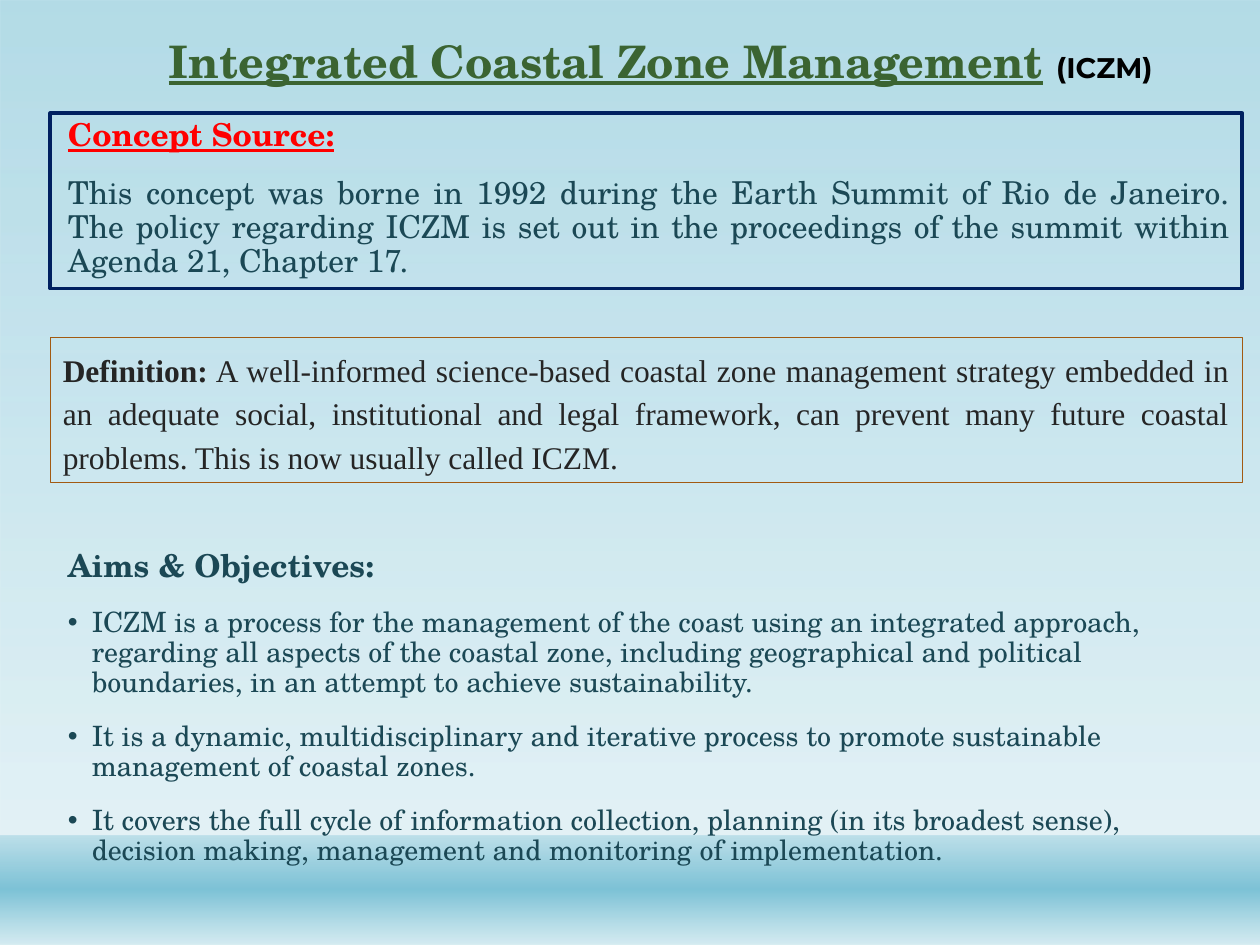
from lxml import etree
from pptx import Presentation
from pptx import util as u
from pptx.dml.color import RGBColor
from pptx.enum import shapes, text
from pptx.oxml.ns import qn

COLORS = {
    "water": "7DC2D6", "mist": "D4EBF1", "green": "3B6432", "black": "000000",
    "teal": "1B4855", "red": "FF0000", "navy": "002060", "brown": "A25A12",
    "ink": "252525",
}
SCHOLA, TIMES = "TeX Gyre Schola", "Times New Roman"

# Font formats
TITLE = dict(name=SCHOLA, size=25.6, color="green", bold=True, underline=True)
SHORT = dict(name="Montserrat", size=16.2, color="black", bold=True)
SOURCE_HEAD = dict(name=SCHOLA, size=18, color="red", bold=True, underline=True)
HEAD = dict(name=SCHOLA, size=18, color="teal", bold=True)
BODY = dict(name=SCHOLA, size=18, color="teal")
BULLET = dict(name=SCHOLA, size=16, color="teal")
TERM = dict(name=TIMES, size=18, color="ink", bold=True)
PROSE = dict(name=TIMES, size=18, color="ink")

# Paragraph formats
PLAIN = dict(spacing=0.9)
INSET = dict(spacing=0.9, left=0.04)
INSET_JUSTIFIED = dict(INSET, align=text.PP_ALIGN.JUSTIFY)
LISTED = dict(spacing=0.9, left=0.23, hang=-0.19, bullet="•")
LOOSE = dict(spacing=1.15, align=text.PP_ALIGN.JUSTIFY)

AIMS = [
    "ICZM is a process for the management of the coast using an integrated approach, "
    "regarding all aspects of the coastal zone, including geographical and political "
    "boundaries, in an attempt to achieve sustainability.",
    "It is a dynamic, multidisciplinary and iterative process to promote sustainable "
    "management of coastal zones.",
    "It covers the full cycle of information collection, planning (in its broadest "
    "sense), decision making, management and monitoring of implementation.",
]

# Background: place, then stops of (position %, colour, opacity %)
BACKDROP = [
    ((0, 0, 10, 7.5), [(0, "water", 58), (88, "mist", 65)]),
    ((0, 6.63, 10, 0.87), [(1, "water", 38), (49, "water", 100), (100, "mist", 89)]),
]

# Text blocks: place, anchor, outline, then paragraphs of (format, spans)
TOP, MIDDLE, BOTTOM = (text.MSO_ANCHOR.TOP, text.MSO_ANCHOR.MIDDLE,
                       text.MSO_ANCHOR.BOTTOM)
BLOCKS = [
    ((1.24, 0.09, 8.76, 0.66), BOTTOM, None, [
        (PLAIN, [("Integrated Coastal Zone Management", TITLE),
                 (" ", dict(TITLE, underline=False)), ("(ICZM)", SHORT)]),
    ]),
    ((0.4, 4.32, 9.42, 2.67), TOP, None, [
        (INSET, [("Aims & Objectives:", HEAD)]),
        *[(LISTED, [(aim, BULLET)]) for aim in AIMS],
    ]),
    ((0.4, 0.9, 9.46, 1.39), TOP, ("navy", 2.25), [
        (INSET, [("Concept Source:", SOURCE_HEAD)]),
        (INSET_JUSTIFIED, [(
            "This concept was borne in 1992 during the Earth Summit of Rio de Janeiro. "
            "The policy regarding ICZM is set out in the proceedings of the summit "
            "within Agenda 21, Chapter 17.", BODY)]),
    ]),
    ((0.4, 2.68, 9.46, 1.15), MIDDLE, ("brown", 0.75), [
        (LOOSE, [("Definition:", TERM), (
            " A well-informed science-based coastal zone management strategy embedded "
            "in an adequate social, institutional and legal framework, can prevent many "
            "future coastal problems. This is now usually called ICZM.", PROSE)]),
    ]),
]


def rgb(name):
    return RGBColor.from_string(COLORS[name])


def add_rectangle(page, place):
    box = page.shapes.add_shape(shapes.MSO_SHAPE.RECTANGLE, *map(u.Inches, place))
    box.shadow.inherit = False
    box.fill.background()
    box.line.fill.background()
    return box


def set_gradient(box, stops):
    """Fill from top to bottom with partly transparent stops."""
    box.fill.gradient()
    box.fill.gradient_angle = 270
    stop_list = box.fill._fill._gradFill.find(qn("a:gsLst"))
    for old in list(stop_list):
        stop_list.remove(old)
    for position, color, opacity in stops:
        stop = etree.SubElement(stop_list, qn("a:gs"), pos=str(position * 1000))
        value = etree.SubElement(stop, qn("a:srgbClr"), val=COLORS[color])
        etree.SubElement(value, qn("a:alpha"), val=str(opacity * 1000))


def format_paragraph(para, style, first):
    para.alignment = style.get("align", text.PP_ALIGN.LEFT)
    para.line_spacing = style["spacing"]
    para.space_before = u.Pt(0 if first else 13.5)
    props = para._p.get_or_add_pPr()
    props.set("marL", str(u.Inches(style.get("left", 0))))
    props.set("indent", str(u.Inches(style.get("hang", 0))))
    if "bullet" in style:
        etree.SubElement(props, qn("a:buFont"), typeface="Arial")
        etree.SubElement(props, qn("a:buChar"), char=style["bullet"])


def add_span(para, words, style):
    span = para.add_run()
    span.text = words
    values = dict(style, size=u.Pt(style["size"]))
    span.font.color.rgb = rgb(values.pop("color"))
    for key, value in values.items():
        setattr(span.font, key, value)


def add_block(page, place, anchor, outline, paragraphs):
    if outline:
        box = add_rectangle(page, place)
        box.line.color.rgb = rgb(outline[0])
        box.line.width = u.Pt(outline[1])
    else:
        box = page.shapes.add_textbox(*map(u.Inches, place))
    frame = box.text_frame
    frame.word_wrap = True
    frame.vertical_anchor = anchor
    for index, (style, spans) in enumerate(paragraphs):
        para = frame.add_paragraph() if index else frame.paragraphs[0]
        format_paragraph(para, style, index == 0)
        for words, font in spans:
            add_span(para, words, font)


def main():
    deck = Presentation()
    deck.slide_width, deck.slide_height = u.Inches(10), u.Inches(7.5)
    page = deck.slides.add_slide(deck.slide_layouts[6])
    for place, stops in BACKDROP:
        set_gradient(add_rectangle(page, place), stops)
    for block in BLOCKS:
        add_block(page, *block)
    deck.save("out.pptx")


if __name__ == "__main__":
    main()
